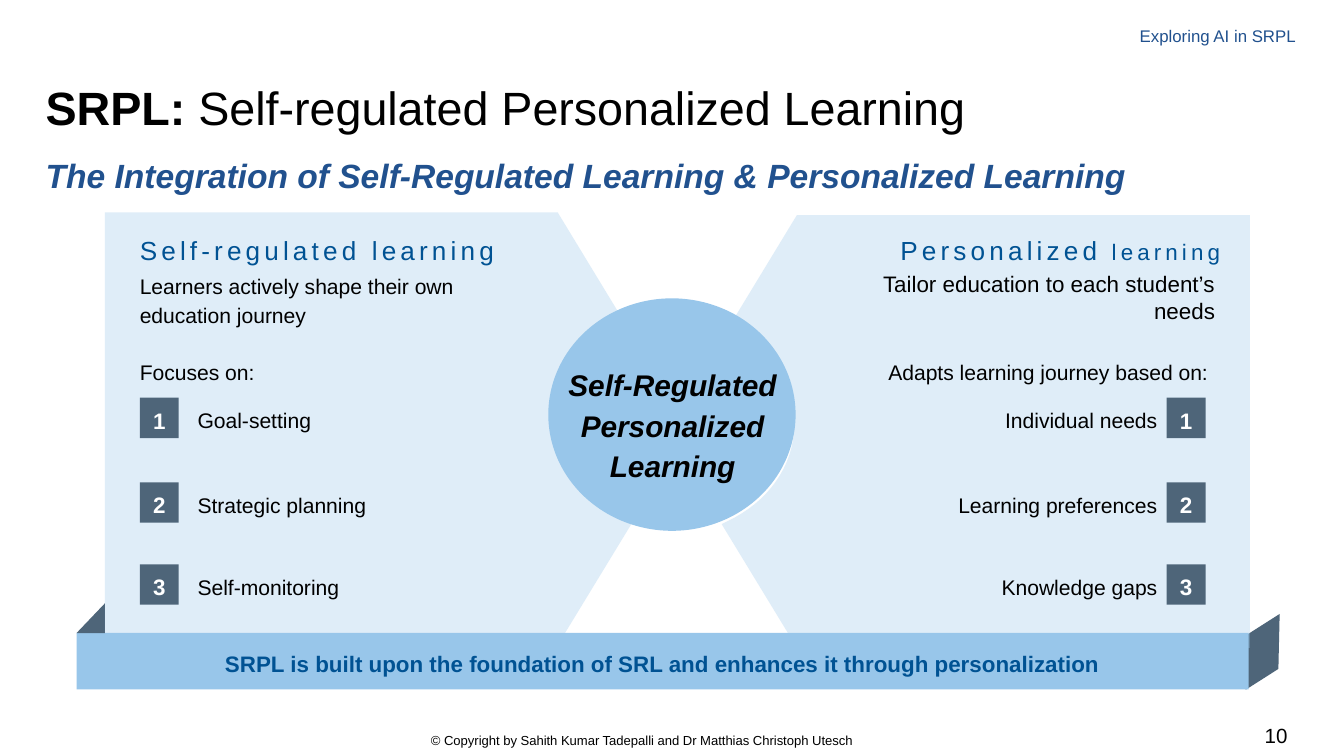
from dataclasses import dataclass

from lxml.etree import SubElement
from pptx import Presentation
from pptx.dml.color import RGBColor as Rgb
from pptx.enum.shapes import MSO_SHAPE as Geo
from pptx.enum.text import MSO_ANCHOR as Anchor, PP_ALIGN as Align
from pptx.oxml.ns import qn
from pptx.util import Inches, Pt


@dataclass(frozen=True)
class Theme:
    """Hold the colours, font and type sizes."""
    font: str = "Arial"
    ink: str = "000000"
    white: str = "FFFFFF"
    navy: str = "21518E"
    blue: str = "005293"
    sky: str = "98C6EA"
    slate: str = "4E6579"
    title: float = 25
    sub: float = 18
    hub: float = 16
    head: float = 14
    label: float = 12
    body: float = 11.25
    page: float = 11
    top: float = 9
    foot: float = 7


T = Theme()
WIDE = 10
AXIS = 5.04
ROWS = (2.96, 3.59, 4.2)


def add_run(para, text, size=T.body, color=T.ink, bold=False, italic=False, space=0):
    """Add one formatted run to a paragraph."""
    run = para.add_run()
    run.text = text
    font = run.font
    font.name, font.size = T.font, Pt(size)
    font.bold, font.italic = bold, italic
    font.color.rgb = Rgb.from_string(color)
    if space:
        run._r.get_or_add_rPr().set("spc", str(round(space * 100)))


def write(shape, text, align=Align.LEFT, lead=1.14, anchor=Anchor.TOP,
          pad=(0, 0), **style):
    """Write text into a shape and return its paragraph."""
    frame = shape.text_frame
    frame.word_wrap = True
    frame.vertical_anchor = anchor
    frame.margin_left = frame.margin_right = Inches(pad[0])
    frame.margin_top = frame.margin_bottom = Inches(pad[1])
    para = frame.paragraphs[0]
    para.alignment, para.line_spacing = align, lead
    add_run(para, text, **style)
    return para


def add_text(slide, box, text, **style):
    """Add a text box and return its paragraph."""
    return write(slide.shapes.add_textbox(*map(Inches, box)), text, **style)


def paint(shape, color, alpha=None):
    """Give a shape a plain fill without line or shadow."""
    shape.shadow.inherit = False
    shape.line.fill.background()
    shape.fill.solid()
    shape.fill.fore_color.rgb = Rgb.from_string(color)
    if alpha:
        tone = next(shape._element.spPr.iter(qn("a:srgbClr")))
        SubElement(tone, qn("a:alpha"), val=str(alpha * 1000))


def add_block(slide, kind, box, color):
    """Add a filled preset shape."""
    shape = slide.shapes.add_shape(kind, *map(Inches, box))
    paint(shape, color)
    return shape


def curve(start, one, two, end, steps=16):
    """Return points along a cubic curve, without its start."""
    return [tuple((1 - t) ** 3 * a + 3 * (1 - t) ** 2 * t * b
                  + 3 * (1 - t) * t ** 2 * c + t ** 3 * d
                  for a, b, c, d in zip(start, one, two, end))
            for t in (i / steps for i in range(1, steps + 1))]


def add_wing(slide, flip=False):
    """Add a pale side panel, mirrored on the right."""
    low, mid, high = (4.67, 3.86), (4.17, 3.14), (4.59, 2.46)
    pts = [(4.15, 1.58), (0.78, 1.58), (0.78, 4.8), (4.15, 4.8), (4.71, 3.88), low]
    pts += curve(low, (4.37, 3.72), (4.17, 3.45), mid)
    pts += curve(mid, (4.17, 2.86), (4.33, 2.6), high) + [(4.66, 2.42)]
    if flip:
        pts = [(2 * AXIS - x, y + 0.02) for x, y in pts]
    pts = [(Inches(x), Inches(y)) for x, y in pts]
    form = slide.shapes.build_freeform(*pts[0])
    form.add_line_segments(pts[1:])
    paint(form.convert_to_shape(), T.sky, 31)


def add_list(slide, items, left, edge, width, align):
    """Add numbered squares with a label beside each."""
    for num, (top, item) in enumerate(zip(ROWS, items), 1):
        box = add_block(slide, Geo.RECTANGLE, (left, top, 0.29, 0.3), T.slate)
        write(box, str(num), align=Align.CENTER, pad=(0.07, 0.04),
              size=T.label, color=T.white, bold=True)
        add_text(slide, (edge, top + 0.05, width, 0.2), item, align=align)


def add_title(slide):
    """Add the title with its subtitle line."""
    para = add_text(slide, (0.34, 0.38, 8.24, 1.03), "SRPL: ", lead=1.5,
                    size=T.title, bold=True)
    add_run(para, "Self-regulated Personalized Learning", size=T.title)
    para.add_line_break()
    add_run(para, "The Integration of Self-Regulated Learning & Personalized Learning",
            size=T.sub, color=T.navy, bold=True, italic=True)


def add_stage(slide):
    """Add the panels, the centre disc and the base bar."""
    side = add_block(slide, Geo.TRAPEZOID, (8.93, 4.74, 0.74, 0.34), T.slate)
    side.adjustments[0] = 0.669
    side.rotation = 147.5
    add_wing(slide, flip=True)
    add_block(slide, Geo.OVAL, (4.08, 2.22, 1.84, 1.73), T.sky)
    base = add_block(slide, Geo.RECTANGLE, (0.57, 4.71, 8.72, 0.42), T.sky)
    write(base, "SRPL is built upon the foundation of SRL and enhances it"
          " through personalization", align=Align.CENTER, anchor=Anchor.MIDDLE,
          pad=(0.07, 0.04), size=T.label, color=T.blue, bold=True)
    fold = add_block(slide, Geo.RIGHT_TRIANGLE, (0.57, 4.49, 0.21, 0.22), T.slate)
    fold._element.spPr.xfrm.set("flipH", "1")
    add_text(slide, (4.12, 2.69, 1.77, 0.9), "Self-Regulated Personalized Learning",
             align=Align.CENTER, size=T.hub, bold=True, italic=True)
    add_wing(slide)


def add_left(slide):
    """Fill the left panel."""
    add_text(slide, (1.04, 1.71, 2.75, 0.25), "Self-regulated learning",
             size=T.head, color=T.blue, space=2.2)
    add_text(slide, (1.04, 2.01, 2.82, 0.41),
             "Learners actively shape their own education journey")
    add_text(slide, (1.04, 2.65, 2.19, 0.2), "Focuses on:")
    add_list(slide, ("Goal-setting", "Strategic planning", "Self-monitoring"),
             1.04, 1.47, 1.44, Align.LEFT)


def add_right(slide):
    """Fill the right panel."""
    look = dict(color=T.blue, space=2.2)
    para = add_text(slide, (6.53, 1.71, 2.55, 0.25), "Personalized",
                    align=Align.RIGHT, size=T.head, **look)
    add_run(para, " learning", size=T.label, **look)
    add_text(slide, (6.22, 2.01, 2.82, 0.41), "Tailor education to each student’s needs",
             align=Align.RIGHT, lead=1, size=T.label)
    add_text(slide, (6.61, 2.65, 2.47, 0.2), "Adapts learning journey based on:")
    add_list(slide, ("Individual needs", "Learning preferences", "Knowledge gaps"),
             8.68, 6.89, 1.72, Align.RIGHT)


def add_edges(slide):
    """Add the header, copyright line and page number."""
    look = dict(lead=1, anchor=Anchor.MIDDLE, pad=(0, 0.05))
    add_text(slide, (7.34, 5.32, 2.24, 0.3), "10", align=Align.RIGHT,
             size=T.page, **look)
    add_text(slide, (0.9, 5.36, 7.75, 0.3),
             "© Copyright by Sahith Kumar Tadepalli and Dr Matthias Christoph Utesch",
             align=Align.CENTER, size=T.foot, **look)
    add_text(slide, (7.99, 0.16, 2.14, 0.21), "Exploring AI in SRPL",
             align=Align.CENTER, size=T.top, color=T.navy, **look)


def main():
    """Build and save the slide."""
    deck = Presentation()
    deck.slide_width, deck.slide_height = Inches(WIDE), Inches(WIDE * 9 / 16)
    slide = deck.slides.add_slide(deck.slide_layouts[6])
    for step in (add_title, add_stage, add_left, add_right, add_edges):
        step(slide)
    deck.save("out.pptx")


if __name__ == "__main__":
    main()
